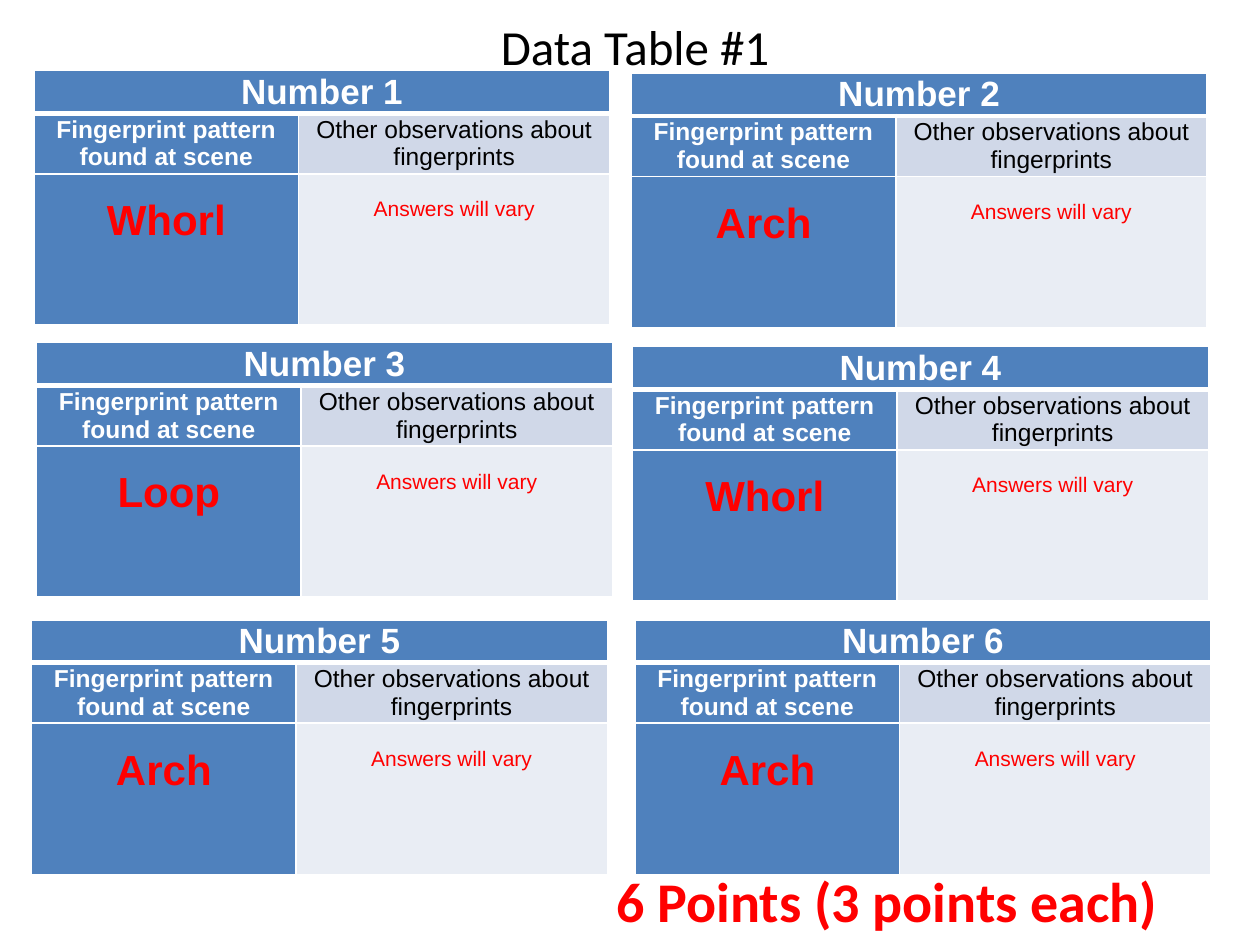
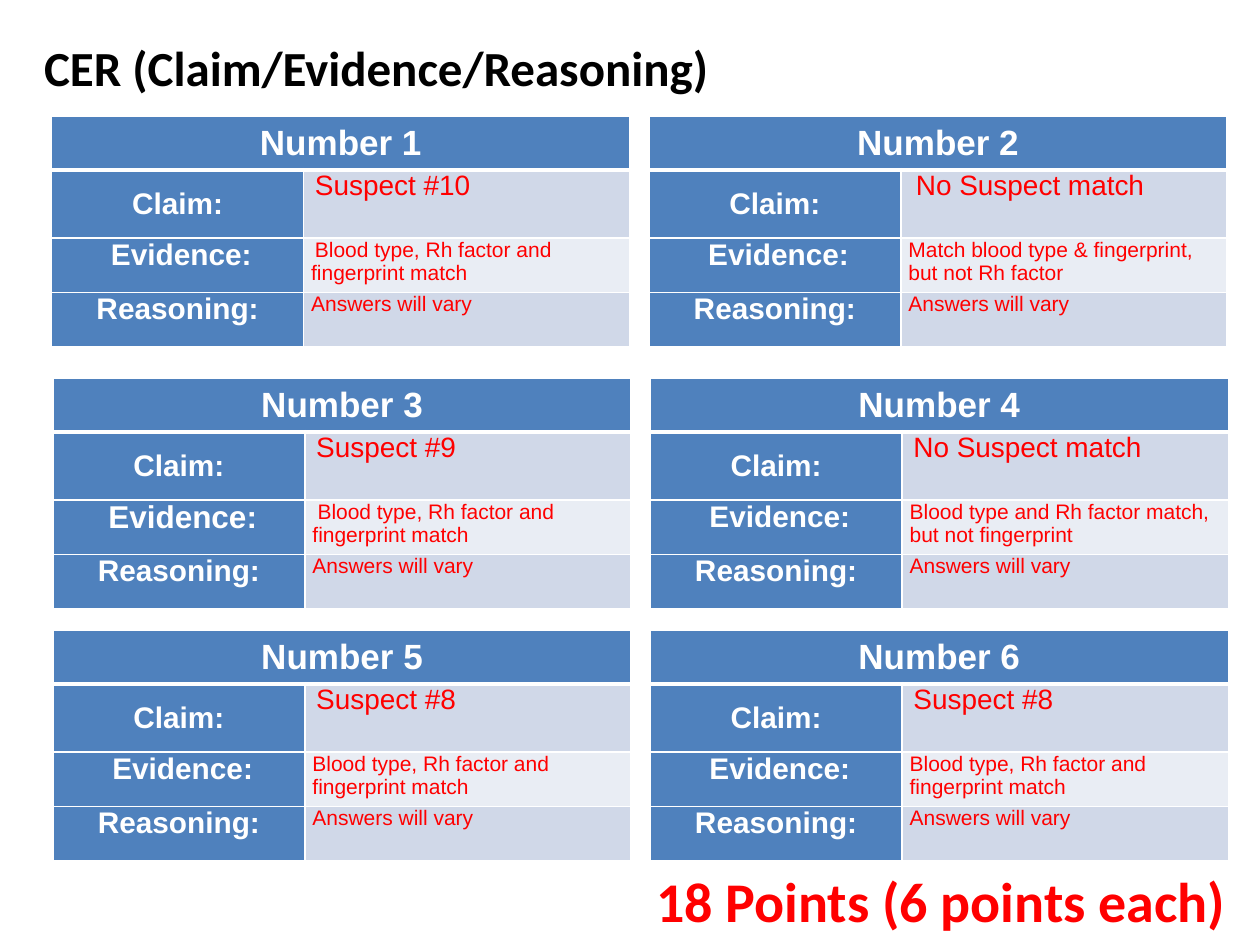
from pptx import Presentation
from pptx.dml.color import RGBColor
from pptx.enum.text import MSO_ANCHOR, MSO_AUTO_SIZE, PP_ALIGN
from pptx.oxml import parse_xml
from pptx.oxml.ns import nsdecls
from pptx.util import Inches, Pt

COLORS = {"black": "000000", "white": "FFFFFF", "red": "FF0000",
          "blue": "4F81BD", "band": "D0D8E8", "pale": "E9EDF4"}
LEFT, CENTER, RIGHT = PP_ALIGN.LEFT, PP_ALIGN.CENTER, PP_ALIGN.RIGHT


def write(frame, text, size, color, bold=False, align=LEFT, font="Arial"):
    frame.text = text
    frame.word_wrap = True
    paragraph = frame.paragraphs[0]
    paragraph.alignment = align
    for run in paragraph.runs:
        run.font.name = font
        run.font.size = Pt(size)
        run.font.bold = bold
        run.font.color.rgb = RGBColor.from_string(COLORS[color])


def add_grid(slide, left, top, widths, heights, heading, side):
    """Add a table with a merged heading, blue first column and white rules."""
    table = slide.shapes.add_table(
        len(heights), len(widths), Inches(left), Inches(top),
        Inches(sum(widths)), Inches(sum(heights))).table
    for column, width in zip(table.columns, widths):
        column.width = Inches(width)
    for r, height in enumerate(heights):
        table.rows[r].height = Inches(height)
        for c in range(len(widths)):
            cell = table.cell(r, c)
            cell.margin_left = cell.margin_right = Inches(side)
            cell.margin_top = cell.margin_bottom = 0
            cell.fill.solid()
            fill = "blue" if r == 0 or c == 0 else "band" if r % 2 else "pale"
            cell.fill.fore_color.rgb = RGBColor.from_string(COLORS[fill])
            edges = {"L": 1, "R": 1, "T": 3 if r == 1 else 1, "B": 1 if r else 3}
            for place, (edge, width) in enumerate(edges.items()):
                cell._tc.get_or_add_tcPr().insert(place, parse_xml(
                    f'<a:ln{edge} {nsdecls("a")} w="{Pt(width)}"><a:solidFill>'
                    f'<a:srgbClr val="{COLORS["white"]}"/></a:solidFill></a:ln{edge}>'))
    table.cell(0, 0).merge(table.cell(0, 1))
    write(table.cell(0, 0).text_frame, heading, 20, "white", True, CENTER)
    table.cell(0, 0).vertical_anchor = MSO_ANCHOR.MIDDLE
    return table


prs = Presentation()
prs.slide_width, prs.slide_height = Inches(10), Inches(7.5)

# Titles and point totals
pages = [
    ("Data Table #1", (0.29, 0.08, 9.5, 1.51), False, CENTER,
     "6 Points (3 points each)", 2.92),
    ("CER (Claim/Evidence/Reasoning)", (0.25, 0.25, 9.5, 1.04), True, LEFT,
     "18 Points (6 points each)", 3.46),
]
slides = []
for heading, box, bold, align, points, points_left in pages:
    slide = prs.slides.add_slide(prs.slide_layouts[5])
    title = slide.shapes.title
    title.left, title.top, title.width, title.height = map(Inches, box)
    write(title.text_frame, heading, 28, "black", bold, align, "Calibri")
    title.text_frame.vertical_anchor = MSO_ANCHOR.TOP
    title.text_frame.auto_size = MSO_AUTO_SIZE.NONE
    total = slide.shapes.add_textbox(
        Inches(points_left), Inches(6.83), Inches(6.37), Inches(0.64))
    write(total.text_frame, points, 32, "red", True, RIGHT, "Calibri")
    slides.append(slide)
data_slide, cer_slide = slides

# Fingerprint tables: left, top, pattern
prints = [(0.27, 0.56, "Whorl"), (5.01, 0.58, "Arch"), (0.29, 2.72, "Loop"),
          (5.02, 2.75, "Whorl"), (0.25, 4.92, "Arch"), (5.04, 4.92, "Arch")]
for number, (left, top, pattern) in enumerate(prints, 1):
    table = add_grid(data_slide, left, top, (2.1, 2.47), (0.34, 0.48, 1.2),
                     f"Number {number}", 0.07)
    labels = [("Fingerprint pattern found at scene", "white", True),
              ("Other observations about fingerprints", "black", False)]
    findings = [(pattern, 24, True), ("Answers will vary", 12, False)]
    for c, (label, color, bold) in enumerate(labels):
        cell = table.cell(1, c)
        write(cell.text_frame, label, 14, color, bold, CENTER)
        cell.vertical_anchor = MSO_ANCHOR.MIDDLE
        finding, size, bold = findings[c]
        cell = table.cell(2, c)
        write(cell.text_frame, finding, size, "red", bold, CENTER)
        cell.margin_top = Inches(0.19)

# Claim tables: claim, its indent, evidence, its indent, evidence label size
match = "Blood type, Rh factor and fingerprint match"
cases = [
    ("Suspect #10", 0.03, match, 0.03, 17),
    ("No Suspect match", 0.06, "Match blood type & fingerprint, but not Rh factor", 0, 17),
    ("Suspect #9", 0.03, match, 0.04, 18),
    ("No Suspect match", 0.03, "Blood type and Rh factor match, but not fingerprint", 0, 17),
    ("Suspect #8", 0.03, match, 0, 17),
    ("Suspect #8", 0.03, match, 0, 17),
]
tops = (0.92, 3, 5)
for i, (claim, claim_indent, evidence, evidence_indent, label_size) in enumerate(cases):
    row, col = divmod(i, 2)
    table = add_grid(cer_slide, (0.42 if row else 0.41) + 4.74 * col, tops[row],
                     (2, 2.59), (0.43, 0.54, 0.43, 0.43), f"Number {i + 1}", 0.06)
    parts = [("Claim:", 17, claim, 16, claim_indent),
             ("Evidence:", label_size, evidence, 12, evidence_indent),
             ("Reasoning:", 17, "Answers will vary", 12, 0)]
    for r, (label, size, answer, answer_size, indent) in enumerate(parts, 1):
        write(table.cell(r, 0).text_frame, label, size, "white", True, CENTER)
        reply = table.cell(r, 1).text_frame
        write(reply, answer, answer_size, "red")
        reply.paragraphs[0]._p.get_or_add_pPr().set("indent", str(Inches(indent)))
    table.cell(1, 0).vertical_anchor = MSO_ANCHOR.MIDDLE
    table.cell(2, 0).margin_left = Inches(0.12)

prs.save("out.pptx")
